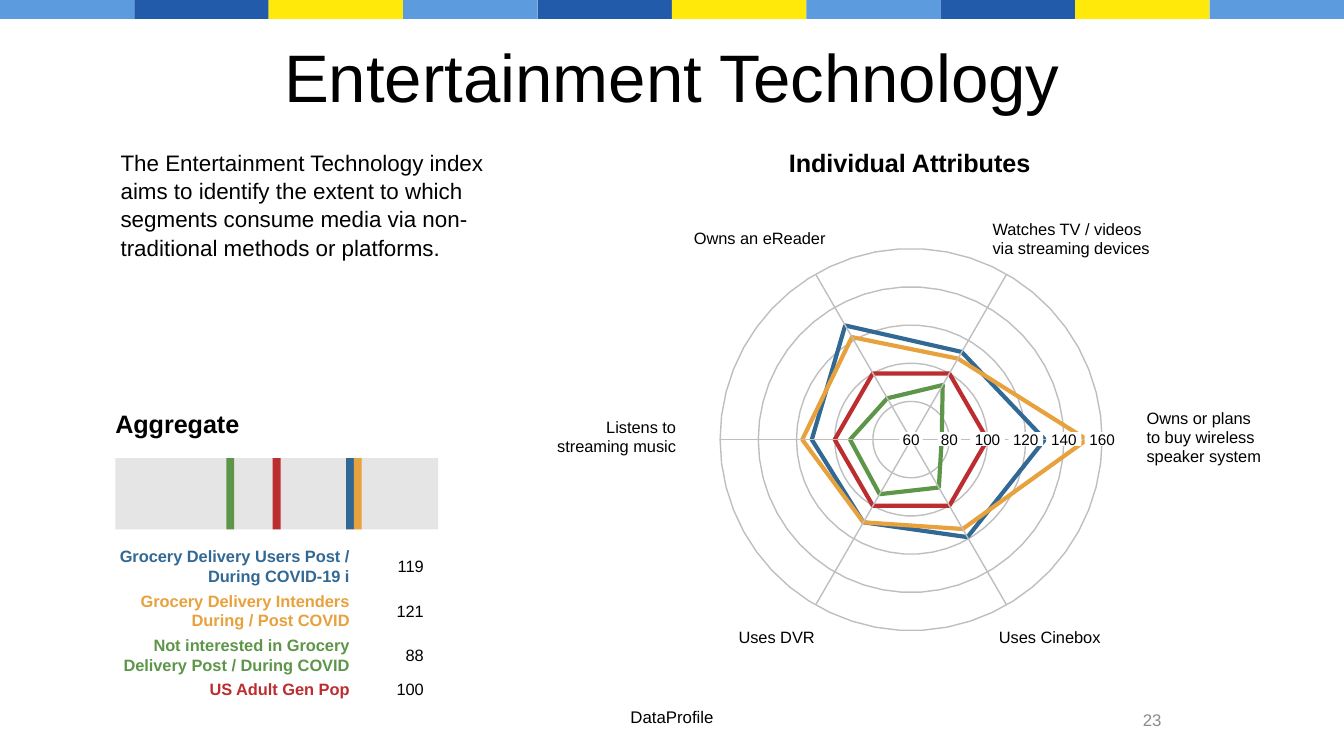
from math import cos, pi, sin

from pptx import Presentation
from pptx.dml.color import RGBColor
from pptx.enum.shapes import MSO_CONNECTOR, MSO_SHAPE
from pptx.enum.text import MSO_ANCHOR, PP_ALIGN
from pptx.oxml.ns import qn
from pptx.util import Cm, Pt
from lxml import etree

RECT = MSO_SHAPE.RECTANGLE
STRAIGHT = MSO_CONNECTOR.STRAIGHT
TOP, MIDDLE = MSO_ANCHOR.TOP, MSO_ANCHOR.MIDDLE
LEFT, CENTER, RIGHT = PP_ALIGN.LEFT, PP_ALIGN.CENTER, PP_ALIGN.RIGHT

BLACK = RGBColor(0x00, 0x00, 0x00)
WHITE = RGBColor(0xFF, 0xFF, 0xFF)
GRAY = RGBColor(0x8C, 0x8C, 0x8C)
GRID = RGBColor(0xBE, 0xBE, 0xBE)
TRACK = RGBColor(0xE5, 0xE5, 0xE5)
SKY = RGBColor(0x5B, 0x9B, 0xDE)
ROYAL = RGBColor(0x23, 0x5B, 0xAB)
YELLOW = RGBColor(0xFF, 0xE9, 0x0A)
BLUE = RGBColor(0x32, 0x69, 0x94)
ORANGE = RGBColor(0xE7, 0xA1, 0x3D)
GREEN = RGBColor(0x5D, 0x96, 0x48)
RED = RGBColor(0xBC, 0x2D, 0x30)

TITLE = {"size": Pt(36)}
HEADING = {"size": Pt(13.5), "bold": True}
BODY = {"size": Pt(12)}
SMALL = {"size": Pt(9)}
LABEL = {"size": Pt(8.8)}
SEGMENT = {"size": Pt(8.8), "bold": True}
TICK = {"size": Pt(8.2)}
LABEL_PITCH = Pt(10.2)

SEGMENTS = [
    (["Grocery Delivery Users Post /", "During COVID-19 i"], BLUE, 119,
     [130, 113, 129, 112, 110, 119]),
    (["Grocery Delivery Intenders", "During / Post COVID"], ORANGE, 121,
     [152, 109, 122, 117, 110, 114]),
    (["Not interested in Grocery", "Delivery Post / During COVID"], GREEN, 88,
     [76, 93, 85, 92, 93, 89]),
    (["US Adult Gen Pop"], RED, 100, [100] * 6),
]
ATTRIBUTES = [
    (["Owns or plans", "to buy wireless", "speaker system"], 4.45, -0.05, LEFT),
    (["Watches TV / videos", "via streaming devices"], 1.54, -3.8, LEFT),
    (["Owns an eReader"], -2.86, -3.8, CENTER),
    (["Listens to", "streaming music"], -4.44, -0.05, RIGHT),
    (["Uses DVR"], -2.54, 3.73, CENTER),
    (["Uses Cinebox"], 2.62, 3.73, CENTER),
]
ALIGN_SHARE = {LEFT: 0, CENTER: 0.5, RIGHT: 1}
AXIS_MIN, AXIS_MAX, AXIS_STEP = 60, 160, 20
RING_SIDES = 50


def add_block(slide, box, color):
    block = slide.shapes.add_shape(RECT, *map(Cm, box))
    block.shadow.inherit = False
    block.fill.solid()
    block.fill.fore_color.rgb = color
    block.line.fill.background()
    return block


def write(frame, lines, style, color=BLACK, align=LEFT, anchor=TOP,
          pitch=None, inset=True):
    frame.word_wrap = True
    frame.vertical_anchor = anchor
    if not inset:
        for side in ("left", "right", "top", "bottom"):
            setattr(frame, f"margin_{side}", 0)
    for index, line in enumerate(lines):
        paragraph = frame.add_paragraph() if index else frame.paragraphs[0]
        paragraph.alignment = align
        if pitch:
            paragraph.line_spacing = pitch
        run = paragraph.add_run()
        run.text = line
        for name, value in {"name": "Arial", **style}.items():
            setattr(run.font, name, value)
        run.font.color.rgb = color


def add_text(slide, box, lines, style, **layout):
    write(slide.shapes.add_textbox(*map(Cm, box)).text_frame, lines, style, **layout)


def add_band(slide, left, top, width, height):
    stripe_width = width / 10
    for index in range(10):
        stripe_color = (SKY, ROYAL, YELLOW)[index % 3]
        add_block(slide, (left + index * stripe_width, top, stripe_width, height),
                  stripe_color)


def add_aggregate(slide, left, top, width, height):
    add_text(slide, (left - 0.25, top, 4, 0.86), ["Aggregate"], HEADING)
    track_top, track_height, mark_width = top + 1.07, 1.35, 0.15
    add_block(slide, (left, track_top, width, track_height), TRACK)
    for _, color, index, _ in SEGMENTS:
        mark_left = left + width / 2 + (index - 100) * 0.073 - mark_width / 2
        add_block(slide, (mark_left, track_top, mark_width, track_height), color)
    row_bottom = top + height
    for names, color, index, _ in reversed(SEGMENTS):
        row_height = 0.46 + 0.38 * (len(names) - 1)
        row_top = row_bottom - row_height
        add_text(slide, (left - 0.6, row_top, 5.03, row_height), names, SEGMENT,
                 color=color, align=RIGHT, anchor=MIDDLE, pitch=Pt(10.6), inset=False)
        add_text(slide, (left + 4.8, row_top, 1.03, row_height), [str(index)], LABEL,
                 align=RIGHT, anchor=MIDDLE, inset=False)
        row_bottom = row_top


def add_radar(slide, left, top, width, height):
    center_x, center_y, radius = left + width / 2, top + height / 2, 3.61

    def locate(value, turn):
        reach = radius * (value - AXIS_MIN) / (AXIS_MAX - AXIS_MIN)
        return (Cm(center_x + reach * cos(2 * pi * turn)),
                Cm(center_y - reach * sin(2 * pi * turn)))

    def add_outline(values, color, weight):
        points = [locate(value, i / len(values)) for i, value in enumerate(values)]
        builder = slide.shapes.build_freeform(*points[0])
        builder.add_line_segments(points[1:], close=True)
        outline = builder.convert_to_shape()
        outline.shadow.inherit = False
        outline.fill.background()
        outline.line.color.rgb = color
        outline.line.width = Pt(weight)

    ticks = range(AXIS_MIN, AXIS_MAX + 1, AXIS_STEP)
    for tick in reversed(ticks[1:]):
        add_outline([tick] * RING_SIDES, GRID, 0.75)
    for _, color, _, values in SEGMENTS:
        add_outline(values, color, 2.25)

    for index, (lines, x, y, align) in enumerate(ATTRIBUTES):
        spoke = slide.shapes.add_connector(
            STRAIGHT, Cm(center_x), Cm(center_y),
            *locate(AXIS_MAX, index / len(ATTRIBUTES)))
        spoke.line.color.rgb = GRID
        spoke.line.width = Pt(0.75)
        etree.SubElement(spoke._element.spPr, qn("a:effectLst"))
        label_left = center_x + x - 4 * ALIGN_SHARE[align]
        add_text(slide, (label_left, center_y + y - 0.6, 4, 1.2), lines, LABEL,
                 align=align, anchor=MIDDLE, pitch=LABEL_PITCH, inset=False)

    for index, tick in enumerate(ticks):
        tick_width = 0.22 * len(str(tick))
        tick_left = center_x + index * radius / (len(ticks) - 1) - tick_width / 2
        plate = add_block(slide, (tick_left, center_y - 0.14, tick_width, 0.26), WHITE)
        write(plate.text_frame, [str(tick)], TICK, align=CENTER, anchor=MIDDLE,
              inset=False)
        plate.text_frame.word_wrap = False


def add_footer(slide, left, top, width, height):
    add_text(slide, (left, top, width, height), ["DataProfile"], SMALL, align=CENTER)
    add_text(slide, (left + 18.95, top, 3.25, 0.76), ["23"], SMALL,
             color=GRAY, align=RIGHT, anchor=MIDDLE)


def main():
    deck = Presentation()
    deck.slide_width, deck.slide_height = Cm(25.4), Cm(14.29)
    slide = deck.slides.add_slide(deck.slide_layouts[6])
    add_band(slide, 0, 0, 25.4, 0.36)
    add_text(slide, (1.27, 0.58, 22.86, 1.7), ["Entertainment Technology"], TITLE,
             align=CENTER, anchor=MIDDLE)
    add_text(slide, (2.03, 2.67, 8.1, 3.96),
             ["The Entertainment Technology index aims to identify the extent to which "
              "segments consume media via non-traditional methods or platforms."],
             BODY, pitch=1.05)
    add_text(slide, (14.66, 2.67, 6.6, 1.42), ["Individual Attributes"], HEADING)
    add_aggregate(slide, 2.18, 7.59, 6.1, 5.67)
    add_radar(slide, 10.22, 4.11, 14, 8.4)
    add_footer(slide, 0, 13.23, 25.4, 0.64)
    deck.save("out.pptx")


if __name__ == "__main__":
    main()
